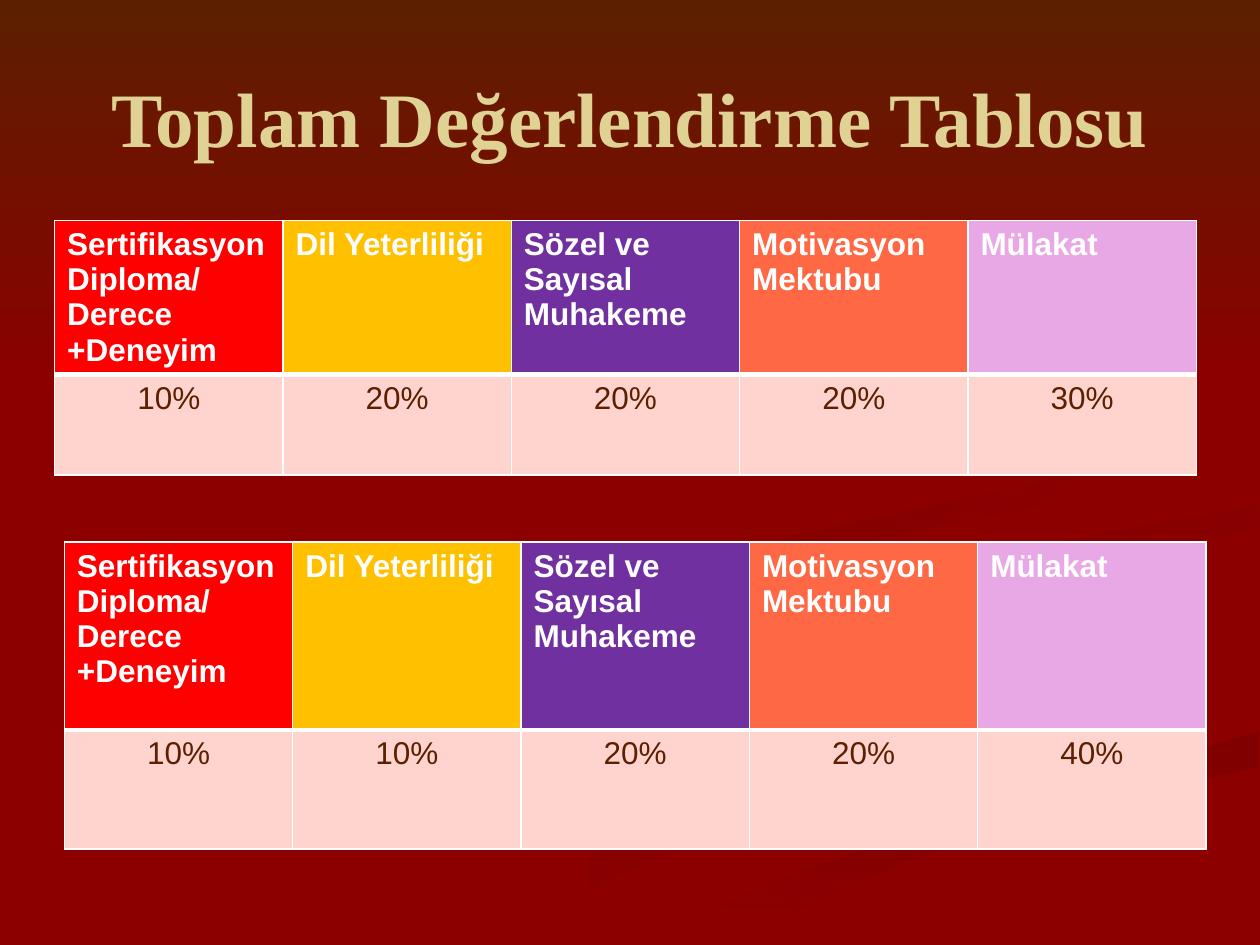
from lxml import etree
from pptx import Presentation
from pptx.dml.color import RGBColor
from pptx.enum.text import MSO_ANCHOR, PP_ALIGN
from pptx.oxml.ns import qn
from pptx.util import Pt


def tint(code):
    return RGBColor.from_string(code)


def border(cell, sides):
    """Draw white cell borders; sides maps a tag to a width in points."""
    props = cell._tc.get_or_add_tcPr()
    for spot, (tag, width) in enumerate(sides.items()):
        line = etree.Element(qn("a:" + tag), w=str(Pt(width)))
        fill = etree.SubElement(line, qn("a:solidFill"))
        etree.SubElement(fill, qn("a:srgbClr"), val="FFFFFF")
        props.insert(spot, line)


deck = Presentation()
deck.slide_width, deck.slide_height = Pt(720), Pt(540)
slide = deck.slides.add_slide(deck.slide_layouts[5])
shapes = slide.shapes

# Background
back = slide.background.fill
back.solid()
back.fore_color.rgb = tint("8C0000")

# Swooshes and top band: start colour, end colour, angle, outline in points
waves = [
    ("8C0000", "860000", 0, [
        (562, 398), (442, 357), (414, 330), (427, 354), (549, 394), (562, 417),
        (388, 467), (216, 539), (260, 539), (406, 479), (566, 433), (576, 418)]),
    ("8C0000", "860000", 45, [
        (679, 410), (639, 385), (536, 353), (521, 334), (544, 364), (634, 395),
        (661, 418), (644, 436)]),
    ("800000", "8C0000", 90, [
        (362, 539), (411, 539), (520, 491), (620, 461), (719, 438), (719, 418),
        (550, 466), (454, 499)]),
    ("8C0000", "8C0000", 0, [
        (522, 334), (558, 362), (662, 394), (679, 410), (634, 438), (477, 481),
        (343, 539), (362, 539), (454, 499), (550, 466), (719, 418), (719, 387),
        (611, 362), (562, 333), (592, 312), (719, 289), (719, 279), (554, 307)]),
    ("840000", "8C0000", 45, [
        (562, 331), (595, 357), (580, 340), (607, 323), (719, 302), (719, 289),
        (592, 312)]),
    ("820000", "8C0000", 45, [
        (492, 310), (594, 289), (644, 248), (607, 198), (549, 168), (609, 201),
        (640, 241), (598, 275), (450, 307), (415, 333), (448, 360), (427, 338)]),
    ("5C1F00", "8C0000", 90, [(0, 0), (0, 222), (720, 222), (720, 0)]),
]
for first, last, angle, dots in waves:
    path = shapes.build_freeform(*dots[0], scale=Pt(1))
    path.add_line_segments(dots[1:], close=True)
    wave = path.convert_to_shape()
    wave.shadow.inherit = False
    wave.line.fill.background()
    if first == last:
        wave.fill.solid()
        wave.fill.fore_color.rgb = tint(first)
        continue
    wave.fill.gradient()
    wave.fill.gradient_angle = -angle % 360  # counter-clockwise
    for stop, code in zip(wave.fill.gradient_stops, (first, last)):
        stop.color.rgb = tint(code)

# Title, brought in front of the band
title = shapes.title
title.element.getparent().append(title.element)
title.left, title.top, title.width, title.height = Pt(36), Pt(21.6), Pt(648), Pt(90)
title.text_frame.text = "Toplam Değerlendirme Tablosu"
title.text_frame.vertical_anchor = MSO_ANCHOR.MIDDLE
para = title.text_frame.paragraphs[0]
para.alignment = PP_ALIGN.CENTER
para.font.name, para.font.size, para.font.bold = "Times New Roman", Pt(44), True
para.font.color.rgb = tint("DFD293")

# Score tables: left, top, row heights, weights
heads = [
    ("Sertifikasyon Diploma/ Derece +Deneyim", "FF0000"),
    ("Dil Yeterliliği", "FFC000"),
    ("Sözel ve Sayısal Muhakeme", "7030A0"),
    ("Motivasyon Mektubu", "FF6845"),
    ("Mülakat", "E8A8E5"),
]
grids = [
    (31.2, 126, (87.8, 57.6), (10, 20, 20, 20, 30)),
    (36.8, 309.8, (107.4, 67.9), (10, 10, 20, 20, 40)),
]
for left, top, highs, marks in grids:
    table = shapes.add_table(2, len(heads), Pt(left), Pt(top),
                             Pt(130.5 * len(heads)), Pt(sum(highs))).table
    for row, high in zip(table.rows, highs):
        row.height = Pt(high)
    for col, ((label, shade), mark) in enumerate(zip(heads, marks)):
        pair = [(label, shade, "FFFFFF"), (f"{mark}%", "FFD4CF", "5C1F00")]
        for row, (text, fill, ink) in enumerate(pair):
            cell = table.cell(row, col)
            cell.text = text
            cell.fill.solid()
            cell.fill.fore_color.rgb = tint(fill)
            para = cell.text_frame.paragraphs[0]
            para.alignment = PP_ALIGN.CENTER if row else PP_ALIGN.LEFT
            para.font.name, para.font.size = "Arial", Pt(18)
            para.font.bold = row == 0
            para.font.color.rgb = tint(ink)
            border(cell, {"lnL": 1, "lnR": 1, "lnT": 3 if row else 1,
                          "lnB": 1 if row else 3})

deck.save("out.pptx")
